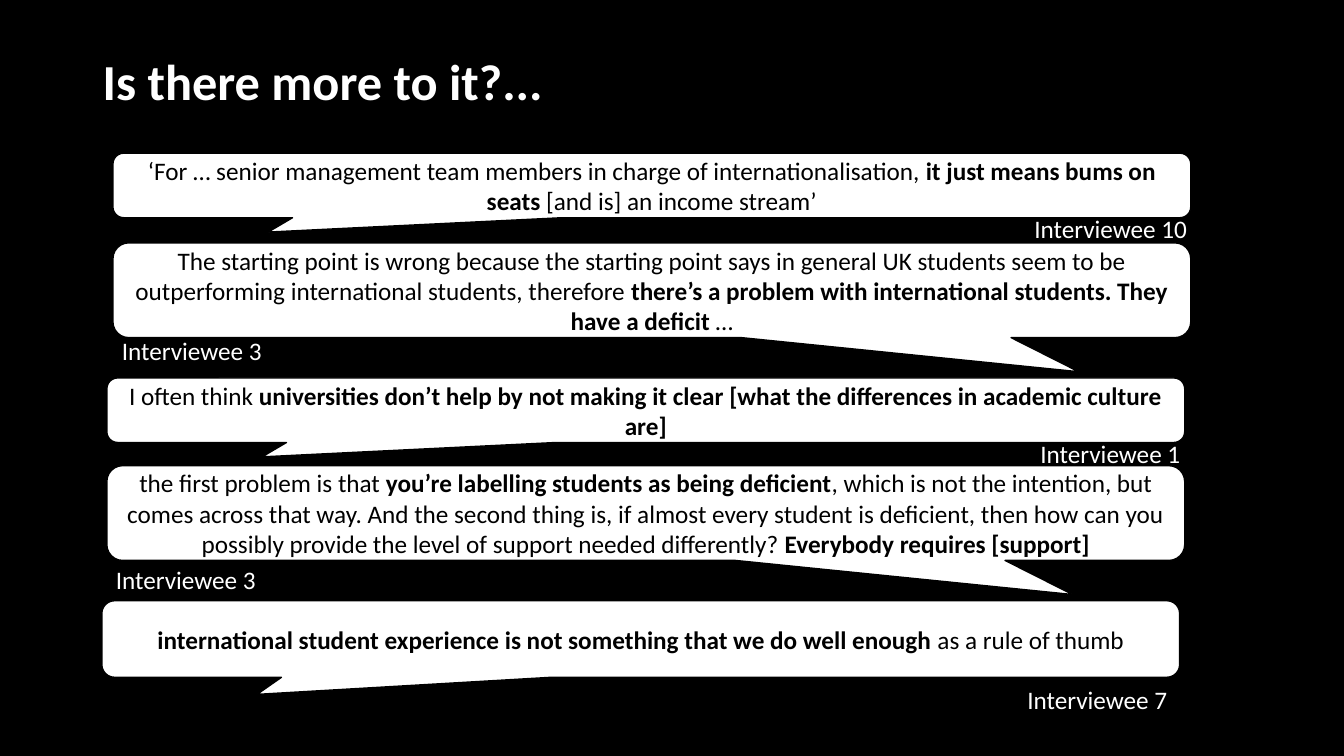
"""Build a slide of interview quotes in speech bubbles."""
from dataclasses import dataclass

from pptx import Presentation
from pptx import util as u
from pptx.dml.color import RGBColor
from pptx.enum import shapes
from pptx.enum import text as t
from pptx.slide import Slide
from pptx.text.text import TextFrame

BLACK = RGBColor(0x00, 0x00, 0x00)
WHITE = RGBColor(0xFF, 0xFF, 0xFF)
FONT = "Calibri"
BUBBLE_WIDTH = 10.69
TAIL_LEFT = (-0.356, 0.723, 0.167)
TAIL_RIGHT = (0.396, 0.86, 0.167)


@dataclass(frozen=True)
class Quote:
    """A bubble whose words between asterisks are bold."""
    words: str
    left: float
    top: float
    height: float
    tail: tuple[float, float, float]


@dataclass(frozen=True)
class Speaker:
    number: int
    left: float
    top: float
    width: float = 1.61


QUOTES = [
    Quote("‘For … senior management team members in charge of internationalisation, "
          "*it just means bums on seats* [and is] an income stream’",
          1.12, 1.52, 0.64, TAIL_LEFT),
    Quote("The starting point is wrong because the starting point says in general UK "
          "students seem to be outperforming international students, therefore "
          "*there’s a problem with international students. They have a deficit *…",
          1.12, 2.41, 0.94, TAIL_RIGHT),
    Quote("I often think *universities don’t help by not making it clear "
          "[what the differences in academic culture are]*",
          1.06, 3.75, 0.64, TAIL_LEFT),
    Quote("the first problem is that *you’re labelling students as being deficient*, "
          "which is not the intention, but comes across that way. And the second thing "
          "is, if almost every student is deficient, then how can you possibly provide "
          "the level of support needed differently? *Everybody requires [support]*",
          1.06, 4.62, 0.94, TAIL_RIGHT),
    Quote("*international student experience is not something that we do well enough*"
          " as a rule of thumb",
          1.01, 5.96, 0.76, TAIL_LEFT),
]
SPEAKERS = [
    Speaker(10, 10.16, 2.07, 1.73),
    Speaker(3, 1.11, 3.28),
    Speaker(1, 10.22, 4.3),
    Speaker(3, 1.05, 5.55),
    Speaker(7, 10.09, 6.74),
]


def write(frame: TextFrame, words: str, *, size: float = 18, color: RGBColor = WHITE,
          align: t.PP_ALIGN = t.PP_ALIGN.LEFT, anchor: t.MSO_ANCHOR = t.MSO_ANCHOR.TOP,
          wrap: bool = True, line_spacing: float = 1.0) -> None:
    """Fill a frame with text, setting words between asterisks in bold."""
    frame.word_wrap = wrap
    frame.vertical_anchor = anchor
    paragraph = frame.paragraphs[0]
    paragraph.alignment = align
    paragraph.line_spacing = line_spacing
    for index, part in enumerate(words.split("*")):
        if part:
            run = paragraph.add_run()
            run.text = part
            run.font.name = FONT
            run.font.size = u.Pt(size)
            run.font.bold = index % 2 == 1
            run.font.color.rgb = color


def add_heading(slide: Slide) -> None:
    heading = slide.shapes.add_textbox(
        u.Inches(0.92), u.Inches(0.11), u.Inches(9.85), u.Inches(1.45))
    write(heading.text_frame, "*Is there more to it?...*", size=36,
          anchor=t.MSO_ANCHOR.MIDDLE, line_spacing=0.9)


def add_quote(slide: Slide, quote: Quote) -> None:
    bubble = slide.shapes.add_shape(
        shapes.MSO_SHAPE.ROUNDED_RECTANGULAR_CALLOUT, u.Inches(quote.left),
        u.Inches(quote.top), u.Inches(BUBBLE_WIDTH), u.Inches(quote.height))
    for index, value in enumerate(quote.tail):
        bubble.adjustments[index] = value
    bubble.shadow.inherit = False
    bubble.fill.solid()
    bubble.fill.fore_color.rgb = WHITE
    bubble.line.color.rgb = BLACK
    bubble.line.width = u.Pt(1)
    write(bubble.text_frame, quote.words, color=BLACK, align=t.PP_ALIGN.CENTER,
          anchor=t.MSO_ANCHOR.MIDDLE)


def add_speaker(slide: Slide, speaker: Speaker) -> None:
    credit = slide.shapes.add_textbox(
        u.Inches(speaker.left), u.Inches(speaker.top),
        u.Inches(speaker.width), u.Inches(0.4))
    credit.text_frame.auto_size = t.MSO_AUTO_SIZE.SHAPE_TO_FIT_TEXT
    write(credit.text_frame, f"Interviewee {speaker.number}", wrap=False)


def main() -> None:
    deck = Presentation()
    deck.slide_width = u.Inches(13.33)
    deck.slide_height = u.Inches(7.5)
    slide = deck.slides.add_slide(deck.slide_layouts[6])
    slide.background.fill.solid()
    slide.background.fill.fore_color.rgb = BLACK
    add_heading(slide)
    for quote in QUOTES:
        add_quote(slide, quote)
    for speaker in SPEAKERS:
        add_speaker(slide, speaker)
    deck.save("out.pptx")


if __name__ == "__main__":
    main()
